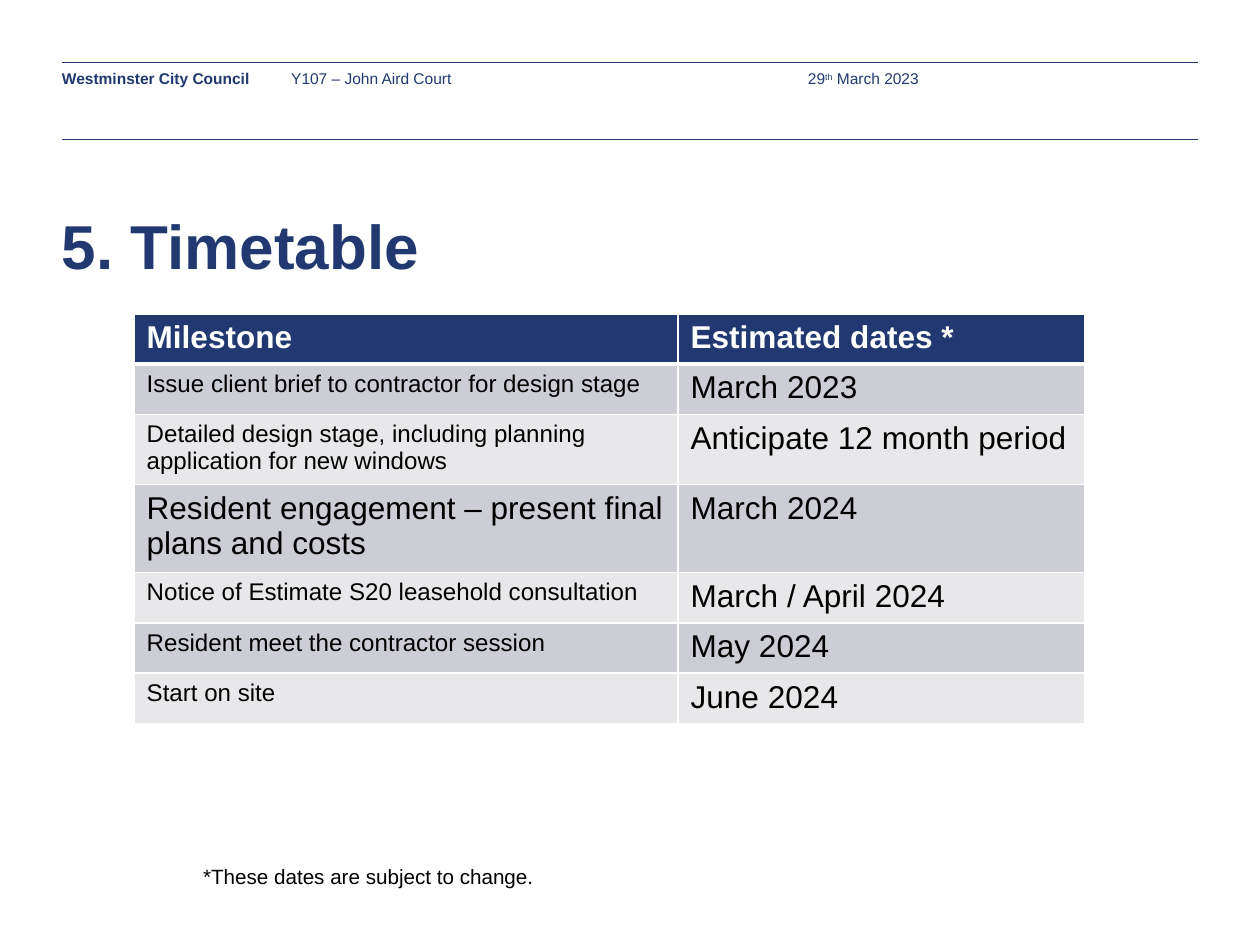
"""Build the timetable slide with its header band, milestone table and footnote."""
from lxml.etree import SubElement
from pptx import Presentation
from pptx.dml.color import RGBColor
from pptx.enum.shapes import MSO_CONNECTOR
from pptx.oxml.ns import qn
from pptx.util import Pt

COLORS = {
    "navy": "213970",
    "white": "FFFFFF",
    "black": "000000",
    "dark_band": "CDCED5",
    "light_band": "E8E8EB",
}
LEFT, RIGHT = 36, 696


def style_font(font, size, color, bold=False):
    font.name = "Arial"
    font.size = Pt(size)
    font.bold = bold
    font.color.rgb = RGBColor.from_string(COLORS[color])


def add_text(page, text, left, top, width, height, size, color, bold=False):
    box = page.shapes.add_textbox(Pt(left), Pt(top), Pt(width), Pt(height))
    frame = box.text_frame
    frame.word_wrap = True
    frame.margin_left = frame.margin_right = frame.margin_top = frame.margin_bottom = 0
    para = frame.paragraphs[0]
    para.text = text
    style_font(para.font, size, color, bold)
    return para


deck = Presentation()
deck.slide_width, deck.slide_height = Pt(732), Pt(551.5)
page = deck.slides.add_slide(deck.slide_layouts[6])

for y in (36, 80.75):
    rule = page.shapes.add_connector(
        MSO_CONNECTOR.STRAIGHT, Pt(LEFT), Pt(y), Pt(RIGHT), Pt(y)
    )
    rule.line.color.rgb = RGBColor.from_string(COLORS["navy"])
    rule.line.width = Pt(0.25)
    SubElement(rule._element.spPr, qn("a:effectLst"))

add_text(page, "Westminster City Council", LEFT, 40.3, 120, 11, 9, "navy", True)
add_text(page, "Y107 – John Aird Court", 169.2, 40.3, 257, 29.5, 9, "navy")
date = add_text(page, "29", 469.4, 40.3, 165, 11, 9, "navy")
ordinal = date.add_run()
ordinal.text = "th"
ordinal.font._element.set("baseline", "30000")
date.add_run().text = " March 2023"

add_text(page, "5. Timetable", LEFT, 120.5, RIGHT - LEFT, 59, 36, "navy", True)

milestones = [
    ("Milestone", "Estimated dates *", 18.3, 29),
    ("Issue client brief to contractor for design stage", "March 2023", 14, 29),
    ("Detailed design stage, including planning application for new windows",
     "Anticipate 12 month period", 14, 39),
    ("Resident engagement – present final plans and costs", "March 2024", 18.3, 48),
    ("Notice of Estimate S20 leasehold consultation", "March / April 2024", 14, 29),
    ("Resident meet the contractor session", "May 2024", 14, 29),
    ("Start on site", "June 2024", 14, 29),
]
table_height = sum(height for *_, height in milestones)
table = page.shapes.add_table(
    len(milestones), 2, Pt(78), Pt(182.4), Pt(552), Pt(table_height)
).table
table.columns[0].width, table.columns[1].width = Pt(316), Pt(236)

for row, (milestone, dates, milestone_size, height) in enumerate(milestones):
    table.rows[row].height = Pt(height)
    is_header = row == 0
    if is_header:
        band = "navy"
    else:
        band = "dark_band" if row % 2 else "light_band"
    for column, (text, size) in enumerate(((milestone, milestone_size), (dates, 18.3))):
        cell = table.cell(row, column)
        para = cell.text_frame.paragraphs[0]
        para.text = text
        style_font(para.font, size, "white" if is_header else "black", is_header)
        properties = cell._tc.get_or_add_tcPr()
        for side in ("lnL", "lnR", "lnT", "lnB"):
            below_header = (row, side) in ((0, "lnB"), (1, "lnT"))
            border = SubElement(
                properties, qn(f"a:{side}"), w=str(Pt(3 if below_header else 1))
            )
            paint = SubElement(border, qn("a:solidFill"))
            SubElement(paint, qn("a:srgbClr"), val=COLORS["white"])
        cell.fill.solid()
        cell.fill.fore_color.rgb = RGBColor.from_string(COLORS[band])

add_text(page, "*These dates are subject to change.", 118, 502, 578, 21, 12, "black")

deck.save("out.pptx")
